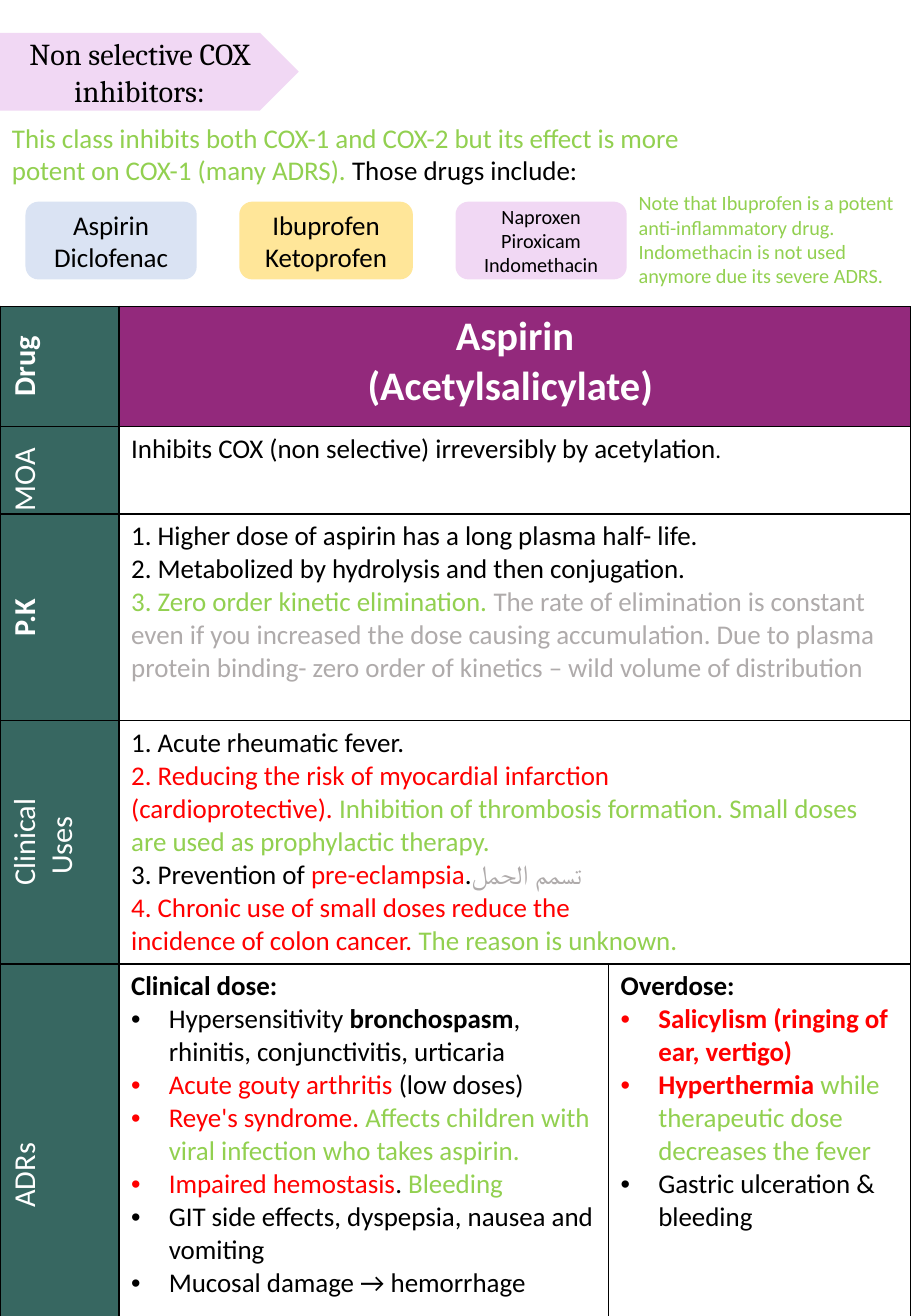
from lxml import etree
from pptx import Presentation
from pptx import util as u
from pptx.dml.color import RGBColor
from pptx.enum import shapes, text
from pptx.oxml import ns

COLOURS = {"ink": "000000", "white": "FFFFFF", "green": "92D050", "red": "FF0000",
           "grey": "AFABAB", "teal": "376761", "purple": "93297C",
           "lilac": "F1D8F4", "blue": "DAE3F3", "yellow": "FFE699"}

HEADING = "Non selective COX inhibitors:"
INTRO = [[("This class inhibits both COX-1 and COX-2 but its effect is more potent on "
           "COX-1 (many ADRS). ", "green"), ("Those drugs include:", "ink")]]
NOTE = [[("Note that Ibuprofen is a potent anti-inflammatory drug.", "green")],
        [("Indomethacin is not used anymore due its severe ADRS.", "green")]]
DRUG_GROUPS = [
    (0.21, 1.41, "blue", 16, ["Aspirin", "Diclofenac"]),
    (1.97, 1.43, "yellow", 16, ["Ibuprofen", "Ketoprofen"]),
    (3.75, 1.41, "lilac", 12, ["Naproxen", "Piroxicam", "Indomethacin"]),
]

DRUG_NAME = [[("Aspirin", "white bold")], [("(Acetylsalicylate) ", "white bold")]]
MECHANISM = [[("Inhibits COX (non selective) irreversibly", "ink"), (" ", "ink", 13.5),
              ("by acetylation", "ink"), (".", "ink", 13.5)]]
KINETICS = [
    [("1. Higher dose of aspirin has a long plasma half- life.", "ink")],
    [("2. Metabolized by hydrolysis and then conjugation.", "ink")],
    [("3. Zero order kinetic elimination. ", "green"),
     ("The rate of elimination is constant even if you increased the dose causing "
      "accumulation. Due to plasma protein binding- zero order of kinetics – wild volume "
      "of distribution", "grey")],
]
USES = [
    [("1. Acute rheumatic fever.", "ink")],
    [("2. Reducing the risk of myocardial infarction", "red")],
    [("(cardioprotective). ", "red"),
     ("Inhibition of thrombosis formation. Small doses are used as prophylactic therapy.",
      "green")],
    [("3. Prevention of ", "ink"), ("pre-eclampsia", "red"), (".", "ink"),
     ("تسمم الحمل", "grey")],
    [("4. Chronic use of small doses reduce the", "red")],
    [("incidence of colon cancer. ", "red"), ("The reason is unknown.", "green")],
]
CLINICAL_DOSE = [
    [("Clinical dose:", "ink bold")],
    [("Hypersensitivity ", "ink"), ("bronchospasm", "ink bold"),
     (", rhinitis, conjunctivitis, urticaria", "ink")],
    [("Acute gouty arthritis ", "red"), ("(low doses)", "ink")],
    [("Reye's syndrome. ", "red"),
     ("Affects children with viral infection who takes aspirin.", "green")],
    [("Impaired hemostasis", "red"), (". ", "ink"), ("Bleeding", "green")],
    [("GIT side effects, dyspepsia, nausea and vomiting", "ink")],
    [("Mucosal damage → hemorrhage", "ink")],
]
OVERDOSE = [
    [("Overdose:", "ink bold")],
    [("Salicylism (ringing of ear, vertigo)", "red bold")],
    [("Hyperthermia ", "red bold"), ("while therapeutic dose decreases the fever", "green")],
    [("Gastric ulceration & bleeding", "ink")],
]

TABLES = [
    (2.52, [0.98, 6.52], [
        (0.99, ["Drug"], "white bold", [DRUG_NAME]),
        (0.87, ["MOA"], "white", [MECHANISM]),
    ]),
    (4.23, [0.98, 4.03, 2.49], [
        (1.7, ["P.K"], "white bold", [KINETICS]),
        (1.97, ["Clinical", "Uses "], "white", [USES]),
        (3.48, ["ADRs"], "white", [CLINICAL_DOSE, OVERDOSE]),
    ]),
]


def box(*lengths):
    return [u.Inches(length) for length in lengths]


def paint(fill, colour):
    fill.solid()
    fill.fore_color.rgb = RGBColor.from_string(COLOURS[colour])


def bullet(paragraph):
    props = paragraph._p.get_or_add_pPr()
    props.set("marL", str(u.Inches(0.31)))
    props.set("indent", str(u.Inches(-0.31)))
    etree.SubElement(props, ns.qn("a:buFont"), typeface="Arial")
    etree.SubElement(props, ns.qn("a:buChar"), char="•")


def write(frame, paragraphs, size, centred=False, bulleted=False, font="Calibri"):
    for index, runs in enumerate(paragraphs):
        paragraph = frame.add_paragraph() if index else frame.paragraphs[0]
        paragraph.alignment = text.PP_ALIGN.CENTER if centred else text.PP_ALIGN.LEFT
        if bulleted and index:
            bullet(paragraph)
        for words, style, *own_size in runs:
            run = paragraph.add_run()
            run.text = words
            run.font.name = font
            run.font.size = u.Pt(own_size[0] if own_size else size)
            run.font.bold = "bold" in style
            run.font.color.rgb = RGBColor.from_string(COLOURS[style.split()[0]])


def plain(lines, style):
    return [[(line, style)] for line in lines]


def add_panel(slide, preset, place, colour):
    panel = slide.shapes.add_shape(preset, *box(*place))
    panel.shadow.inherit = False
    paint(panel.fill, colour)
    panel.line.fill.background()
    return panel


def add_passage(slide, place, paragraphs, size):
    frame = slide.shapes.add_textbox(*box(*place)).text_frame
    frame.word_wrap = True
    frame.auto_size = text.MSO_AUTO_SIZE.SHAPE_TO_FIT_TEXT
    write(frame, paragraphs, size)


def style_cell(cell, colour):
    props = cell._tc.get_or_add_tcPr()
    for side in ("lnL", "lnR", "lnT", "lnB"):
        border = etree.SubElement(props, ns.qn("a:" + side), w=str(u.Pt(1)))
        solid = etree.SubElement(border, ns.qn("a:solidFill"))
        etree.SubElement(solid, ns.qn("a:srgbClr"), val=COLOURS["ink"])
    paint(cell.fill, colour)


def add_drug_table(slide, top, widths, rows):
    height = sum(row[0] for row in rows)
    table = slide.shapes.add_table(len(rows), len(widths),
                                   *box(0, top, sum(widths), height)).table
    table.first_row = table.horz_banding = False
    for column, width in zip(table.columns, widths):
        column.width = u.Inches(width)
    for index, (row_height, label, label_style, details) in enumerate(rows):
        table.rows[index].height = u.Inches(row_height)
        cells = list(table.rows[index].cells)
        for number, cell in enumerate(cells):
            is_name = details[0] is DRUG_NAME
            style_cell(cell, "teal" if number == 0 else "purple" if is_name else "white")
        if len(details) < len(widths) - 1:
            cells[1].merge(cells[-1])
        cells[0]._tc.get_or_add_tcPr().set("vert", "vert270")
        write(cells[0].text_frame, plain(label, label_style), 18, centred=True)
        for cell, detail in zip(cells[1:], details):
            write(cell.text_frame, detail, 24 if is_name else 16, centred=is_name,
                  bulleted=len(details) > 1)


def main():
    deck = Presentation()
    deck.slide_width, deck.slide_height = box(7.5, 10.83)
    slide = deck.slides.add_slide(deck.slide_layouts[5])

    for table in TABLES:
        add_drug_table(slide, *table)

    banner = add_panel(slide, shapes.MSO_SHAPE.PENTAGON, (0, 0.27, 2.46, 0.64), "lilac")
    heading = slide.shapes.title
    banner._element.addnext(heading._element)
    heading.left, heading.top, heading.width, heading.height = box(0, 0.27, 2.3, 0.64)
    heading.text_frame.auto_size = text.MSO_AUTO_SIZE.NONE
    heading.text_frame.vertical_anchor = text.MSO_ANCHOR.MIDDLE
    write(heading.text_frame, plain([HEADING], "ink"), 18, centred=True, font="Cambria")

    add_passage(slide, (0, 0.95, 5.71, 0.64), INTRO, 16)
    for left, width, colour, size, drugs in DRUG_GROUPS:
        group = add_panel(slide, shapes.MSO_SHAPE.ROUNDED_RECTANGLE,
                          (left, 1.66, width, 0.64), colour)
        group.text_frame.vertical_anchor = text.MSO_ANCHOR.MIDDLE
        write(group.text_frame, plain(drugs, "ink"), size, centred=True)
    add_passage(slide, (5.16, 1.52, 2.34, 0.91), NOTE, 12)

    deck.save("out.pptx")


if __name__ == "__main__":
    main()
